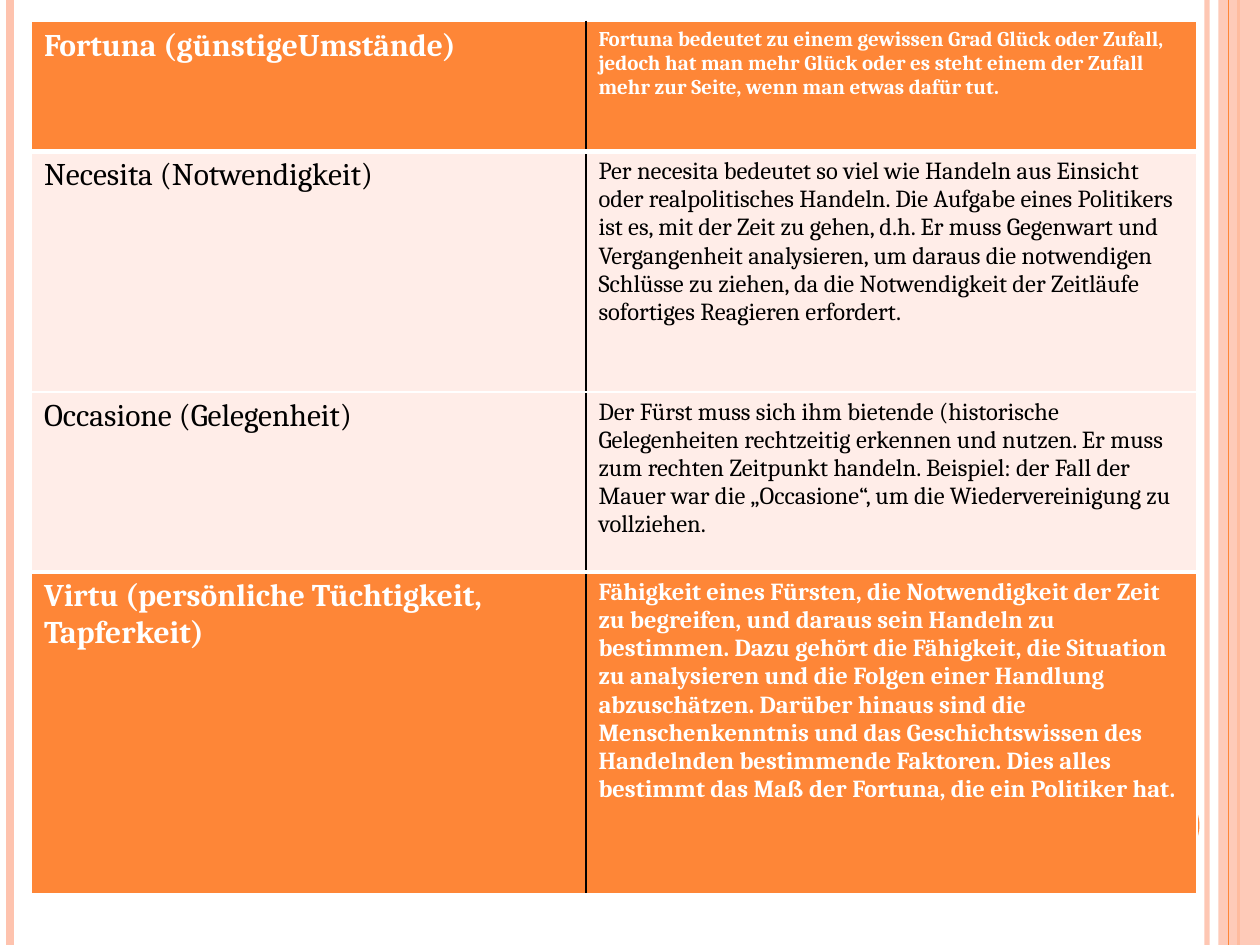
from dataclasses import dataclass
from typing import Optional

from lxml.etree import SubElement
from pptx import Presentation
from pptx.dml.color import RGBColor
from pptx.enum.shapes import MSO_CONNECTOR, MSO_SHAPE
from pptx.oxml import parse_xml
from pptx.oxml.ns import nsdecls, qn
from pptx.util import Inches, Pt

ORANGE = RGBColor(0xFE, 0x86, 0x37)
PEACH = RGBColor(0xFE, 0xC3, 0xAE)
BLUSH = RGBColor(0xFF, 0xED, 0xE8)
WHITE = RGBColor(0xFF, 0xFF, 0xFF)
BLACK = RGBColor(0, 0, 0)

SLIDE_W, SLIDE_H = 10, 7.5
TABLE_LEFT, TABLE_TOP = 0.25, 0.17
COLUMNS = (4.4, 4.85)
FONT = "Cambria"
TERM_SIZE = 18


@dataclass
class Stripe:
    x: float
    color: RGBColor
    width: float
    alpha: Optional[int] = None


@dataclass
class Concept:
    term: str
    meaning: str
    height: float
    size: int = 14
    strong: bool = False


OUTER_STRIPES = [
    Stripe(9.58, PEACH, 3, 93),
    Stripe(0.08, PEACH, 4.5),
    Stripe(9.83, ORANGE, 1.5),
]
BAND_STRIPE = Stripe(9.75, ORANGE, 0.75)

CONCEPTS = [
    Concept(
        "Fortuna (günstigeUmstände)",
        "Fortuna bedeutet zu einem gewissen Grad Glück oder Zufall, jedoch hat man "
        "mehr Glück oder es steht einem der Zufall mehr zur Seite, wenn man etwas "
        "dafür tut.",
        1.03, size=12, strong=True),
    Concept(
        "Necesita (Notwendigkeit)",
        "Per necesita bedeutet so viel wie Handeln aus Einsicht oder realpolitisches "
        "Handeln. Die Aufgabe eines Politikers ist es, mit der Zeit zu gehen, d.h. Er "
        "muss Gegenwart und Vergangenheit analysieren, um daraus die notwendigen "
        "Schlüsse zu ziehen, da die Notwendigkeit der Zeitläufe sofortiges Reagieren "
        "erfordert.",
        1.91),
    Concept(
        "Occasione (Gelegenheit)",
        "Der Fürst muss sich ihm bietende (historische Gelegenheiten rechtzeitig "
        "erkennen und nutzen. Er muss zum rechten Zeitpunkt handeln. Beispiel: der "
        "Fall der Mauer war die „Occasione“, um die Wiedervereinigung zu vollziehen.",
        1.43),
    Concept(
        "Virtu (persönliche Tüchtigkeit, Tapferkeit)",
        "Fähigkeit eines Fürsten, die Notwendigkeit der Zeit zu begreifen, und daraus "
        "sein Handeln zu bestimmen. Dazu gehört die Fähigkeit, die Situation zu "
        "analysieren und die Folgen einer Handlung abzuschätzen. Darüber hinaus sind "
        "die Menschenkenntnis und das Geschichtswissen des Handelnden bestimmende "
        "Faktoren. Dies alles bestimmt das Maß der Fortuna, die ein Politiker hat.",
        2.55, strong=True),
]


def set_alpha(fill, percent: int) -> None:
    """Make a solid fill or line colour partly transparent."""
    color = next(fill._xPr.iter(qn("a:srgbClr")))
    SubElement(color, qn("a:alpha"), val=str(percent * 1000))


def add_stripe(s, stripe: Stripe) -> None:
    x = Inches(stripe.x)
    line = s.shapes.add_connector(MSO_CONNECTOR.STRAIGHT, x, 0, x, Inches(SLIDE_H))
    line.line.color.rgb = stripe.color
    line.line.width = Pt(stripe.width)
    if stripe.alpha:
        set_alpha(line.line.fill, stripe.alpha)
    SubElement(line._element.spPr, qn("a:effectLst"))


def add_block(s, kind: MSO_SHAPE, box: tuple, color: RGBColor):
    sp = s.shapes.add_shape(kind, *(Inches(v) for v in box))
    sp.shadow.inherit = False
    sp.fill.solid()
    sp.fill.fore_color.rgb = color
    sp.line.fill.background()
    return sp


def set_borders(cell, borders: dict) -> None:
    """Draw each side, given as side: (colour, points)."""
    tcPr = cell._tc.get_or_add_tcPr()
    for i, side in enumerate("LRTB"):
        color, width = borders[side]
        tcPr.insert(i, parse_xml(
            f'<a:ln{side} {nsdecls("a")} w="{Pt(width)}"><a:solidFill>'
            f'<a:srgbClr val="{color}"/></a:solidFill></a:ln{side}>'))


def fill_cell(cell, text: str, size: int, strong: bool) -> None:
    cell.fill.solid()
    cell.fill.fore_color.rgb = ORANGE if strong else BLUSH
    r = cell.text_frame.paragraphs[0].add_run()
    r.text = text
    for name, value in {"name": FONT, "size": Pt(size), "bold": strong}.items():
        setattr(r.font, name, value)
    r.font.color.rgb = WHITE if strong else BLACK


def add_concept_table(s) -> None:
    heights = [c.height for c in CONCEPTS]
    box = (TABLE_LEFT, TABLE_TOP, sum(COLUMNS), sum(heights))
    table = s.shapes.add_table(
        len(CONCEPTS), len(COLUMNS), *(Inches(v) for v in box)).table
    table.first_row = table.horz_banding = False
    for column, width in zip(table.columns, COLUMNS):
        column.width = Inches(width)

    # A thick rule parts the strong rows from the plain ones.
    strong = [c.strong for c in CONCEPTS]
    rules = [1] + [3 if a != b else 1 for a, b in zip(strong, strong[1:])] + [1]
    for i, concept in enumerate(CONCEPTS):
        table.rows[i].height = Inches(concept.height)
        texts = ((concept.term, TERM_SIZE), (concept.meaning, concept.size))
        for j, (text, size) in enumerate(texts):
            cell = table.cell(i, j)
            fill_cell(cell, text, size, concept.strong)
            set_borders(cell, {
                "L": (BLACK if j else WHITE, 1),
                "R": (WHITE if j else BLACK, 1),
                "T": (WHITE, rules[i]),
                "B": (WHITE, rules[i + 1]),
            })


def main() -> None:
    prs = Presentation()
    prs.slide_width, prs.slide_height = Inches(SLIDE_W), Inches(SLIDE_H)
    s = prs.slides.add_slide(prs.slide_layouts[6])
    s.background.fill.solid()
    s.background.fill.fore_color.rgb = WHITE

    for stripe in OUTER_STRIPES:
        add_stripe(s, stripe)
    band = add_block(s, MSO_SHAPE.RECTANGLE, (9.67, 0, 0.33, SLIDE_H), PEACH)
    set_alpha(band.fill, 87)
    add_stripe(s, BAND_STRIPE)
    add_block(s, MSO_SHAPE.OVAL, (8.92, 6.25, 0.6, 0.6), ORANGE)
    add_concept_table(s)
    prs.save("out.pptx")


if __name__ == "__main__":
    main()
